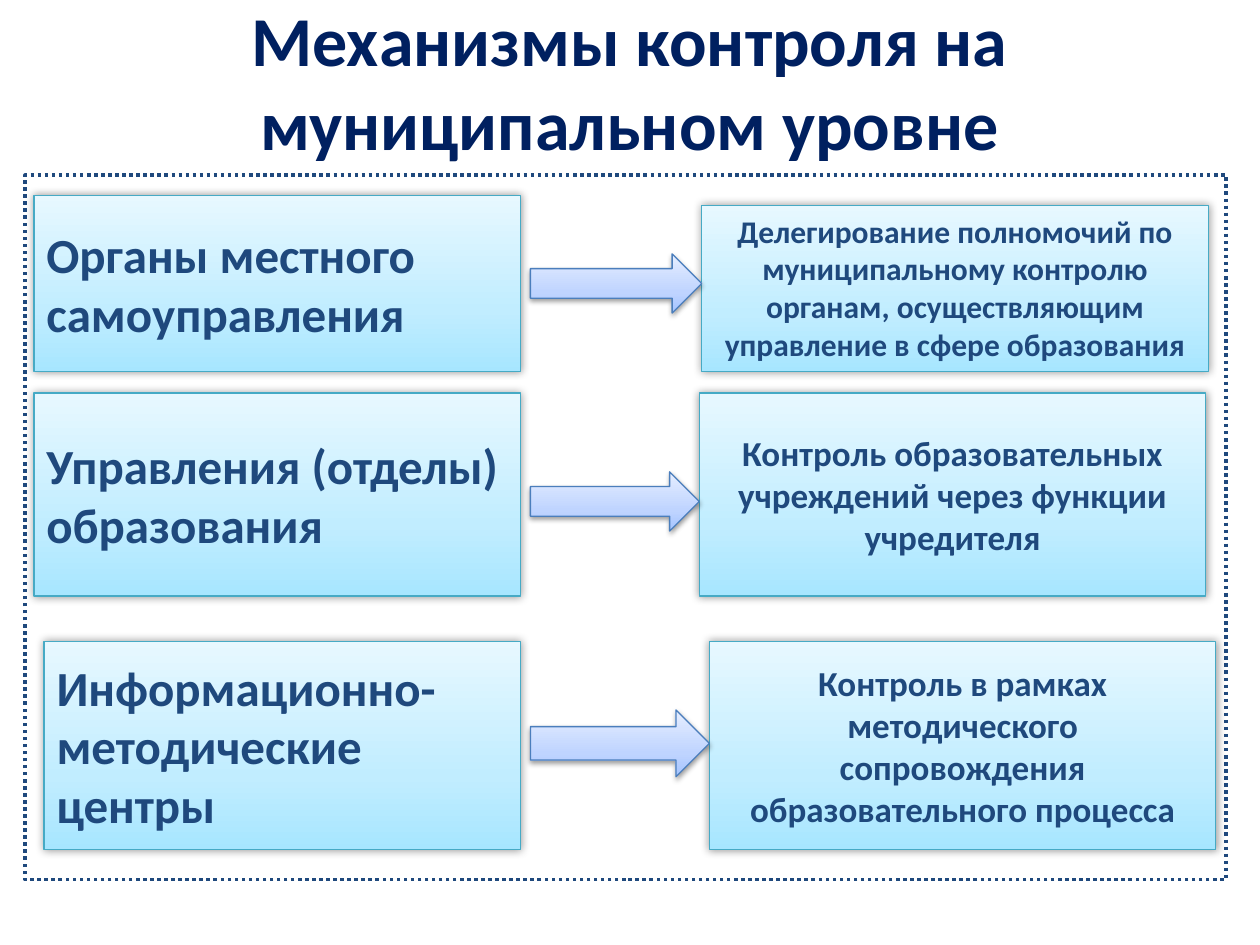
from lxml import etree
from pptx import Presentation
from pptx.dml.color import RGBColor
from pptx.enum.dml import MSO_LINE
from pptx.enum.shapes import MSO_SHAPE
from pptx.enum.text import MSO_ANCHOR, MSO_AUTO_SIZE, PP_ALIGN
from pptx.oxml.ns import qn
from pptx.util import Inches, Pt

RECTANGLE, ARROW = MSO_SHAPE.RECTANGLE, MSO_SHAPE.RIGHT_ARROW
LEFT, CENTER = PP_ALIGN.LEFT, PP_ALIGN.CENTER
TOP, MIDDLE = MSO_ANCHOR.TOP, MSO_ANCHOR.MIDDLE

# Content: each row links a body to its control mechanism
TITLE = "Механизмы контроля на муниципальном уровне"
ROWS = [
    {"body": "Органы местного самоуправления",
     "control": ["Делегирование полномочий по муниципальному контролю",
                 "органам, осуществляющим управление в сфере образования"],
     "size": 18, "fit": True, "top": 1.55, "bottom": 2.95, "control_top": 1.63,
     "body_left": 0.27, "control_left": 5.57,
     "arrow_middle": 2.25, "arrow_height": 0.47},
    {"body": "Управления (отделы) образования",
     "control": ["Контроль образовательных учреждений через функции учредителя"],
     "size": 20, "fit": False, "top": 3.12, "bottom": 4.73, "control_top": 3.12,
     "body_left": 0.27, "control_left": 5.55,
     "arrow_middle": 3.98, "arrow_height": 0.47},
    {"body": "Информационно-методические центры",
     "control": ["Контроль в рамках методического сопровождения "
                 "образовательного процесса"],
     "size": 20, "fit": False, "top": 5.09, "bottom": 6.74, "control_top": 5.09,
     "body_left": 0.35, "control_left": 5.63,
     "arrow_middle": 5.9, "arrow_height": 0.53},
]

# Column edges shared by all rows, in inches
BODY_RIGHT, ARROW_LEFT, CONTROL_WIDTH = 4.13, 4.21, 4.02

THEME = {
    "font": "Calibri", "title": "002060", "text": "1F497D", "frame": "1F497D",
    "title_size": 40, "body_size": 28,
    # Shadows: opacity %, blur pt, distance pt, direction in degrees
    "box": {"stops": [(0, "A7E6FF"), (35, "C1EDFF"), (100, "E7F8FF")],
            "line": "46AAC5", "shadow": (40, 5, 0, 0)},
    "arrow": {"stops": [(0, "A4C4FF"), (35, "BFD4FF"), (100, "E6EEFF")],
              "line": "4B7EBC", "shadow": (38, 3.1, 1.6, 90)},
}


def color_element(parent, color):
    return etree.SubElement(parent, qn("a:srgbClr"), val=color)


def add_figure(slide, kind, left, top, width, height, style):
    """Add a shape with a gradient, a thin outline and a soft shadow."""
    shape = slide.shapes.add_shape(
        kind, Inches(left), Inches(top), Inches(width), Inches(height))
    shape.line.color.rgb = RGBColor.from_string(style["line"])
    shape.line.width = Pt(0.75)
    shape.fill.gradient()
    shape.shadow.inherit = False
    properties = shape.element.spPr

    gradient = properties.find(qn("a:gradFill"))
    stops = gradient.find(qn("a:gsLst"))
    for stop in list(stops):
        stops.remove(stop)
    for position, color in style["stops"]:
        stop = etree.SubElement(stops, qn("a:gs"), pos=str(position * 1000))
        color_element(stop, color)
    gradient.find(qn("a:lin")).set("ang", str(270 * 60000))

    opacity, blur, distance, direction = style["shadow"]
    shadow = etree.SubElement(
        properties.find(qn("a:effectLst")), qn("a:outerShdw"),
        blurRad=str(Pt(blur)), dist=str(Pt(distance)),
        dir=str(direction * 60000), rotWithShape="0")
    etree.SubElement(color_element(shadow, "000000"), qn("a:alpha"),
                     val=str(opacity * 1000))
    return shape


def write(shape, lines, size, color, align, anchor=MIDDLE):
    frame = shape.text_frame
    frame.word_wrap = True
    frame.vertical_anchor = anchor
    frame.text = "\n".join(lines)
    for paragraph in frame.paragraphs:
        paragraph.alignment = align
        paragraph.font.name = THEME["font"]
        paragraph.font.size = Pt(size)
        paragraph.font.bold = True
        paragraph.font.color.rgb = RGBColor.from_string(color)


def add_row(slide, row):
    top, bottom = row["top"], row["bottom"]
    body_left, control_left = row["body_left"], row["control_left"]
    control_top, arrow_height = row["control_top"], row["arrow_height"]

    body = add_figure(slide, RECTANGLE, body_left, top,
                      BODY_RIGHT - body_left, bottom - top, THEME["box"])
    write(body, [row["body"]], THEME["body_size"], THEME["text"], LEFT)

    control = add_figure(slide, RECTANGLE, control_left, control_top,
                         CONTROL_WIDTH, bottom - control_top, THEME["box"])
    write(control, row["control"], row["size"], THEME["text"], CENTER,
          TOP if row["fit"] else MIDDLE)
    if row["fit"]:
        control.text_frame.auto_size = MSO_AUTO_SIZE.SHAPE_TO_FIT_TEXT

    add_figure(slide, ARROW, ARROW_LEFT, row["arrow_middle"] - arrow_height / 2,
               control_left - ARROW_LEFT, arrow_height, THEME["arrow"])


def main():
    presentation = Presentation()
    presentation.slide_width, presentation.slide_height = Inches(10), Inches(7.5)
    slide = presentation.slides.add_slide(presentation.slide_layouts[6])

    # Title
    title = slide.shapes.add_textbox(
        Inches(0.35), Inches(0.05), Inches(9.29), Inches(1.18))
    write(title, [TITLE], THEME["title_size"], THEME["title"], CENTER)

    # Dotted frame around the scheme
    frame = slide.shapes.add_shape(
        RECTANGLE, Inches(0.2), Inches(1.39), Inches(9.53), Inches(5.59))
    frame.shadow.inherit = False
    frame.fill.background()
    frame.line.color.rgb = RGBColor.from_string(THEME["frame"])
    frame.line.width = Pt(2)
    frame.line.dash_style = MSO_LINE.ROUND_DOT

    # Rows of the scheme
    for row in ROWS:
        add_row(slide, row)

    presentation.save("out.pptx")


if __name__ == "__main__":
    main()
